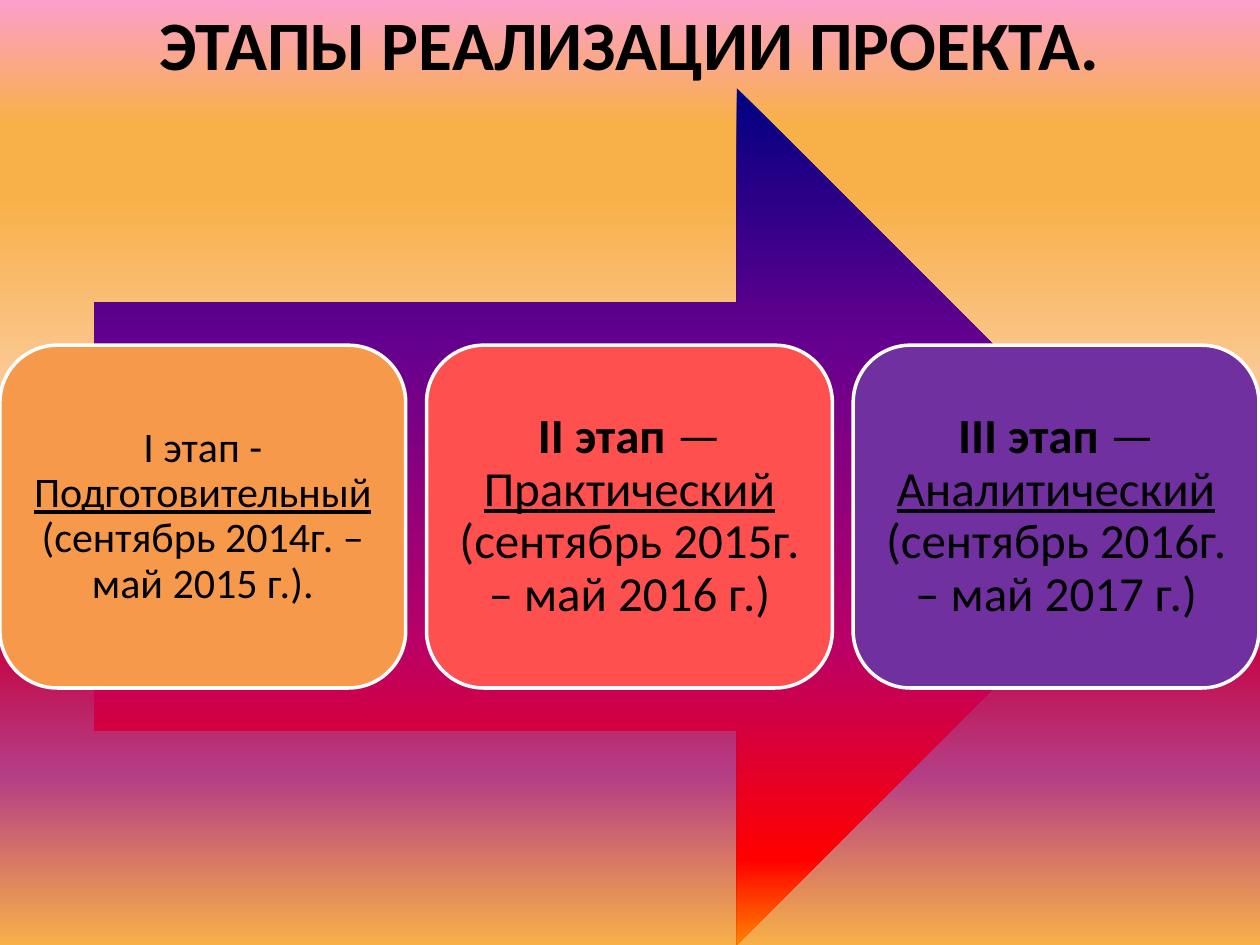
from lxml import etree
from pptx import Presentation
from pptx import util as u
from pptx.dml.color import RGBColor
from pptx.enum import shapes, text
from pptx.oxml.ns import qn

BLACK = RGBColor(0x00, 0x00, 0x00)
WHITE = RGBColor(0xFF, 0xFF, 0xFF)
ORANGE = RGBColor(0xF7, 0x99, 0x4B)
CORAL = RGBColor(0xFF, 0x50, 0x50)
PURPLE = RGBColor(0x70, 0x30, 0xA0)

SUNSET = [
    (0, RGBColor(0xFC, 0x9F, 0xCB)), (13, RGBColor(0xF8, 0xB0, 0x49)),
    (21, RGBColor(0xF8, 0xB0, 0x49)), (63, RGBColor(0xFE, 0xE7, 0xF2)),
    (67, RGBColor(0xF9, 0x52, 0xA0)), (69, RGBColor(0xC5, 0x08, 0x49)),
    (82, RGBColor(0xB4, 0x3E, 0x85)), (100, RGBColor(0xF8, 0xB0, 0x49)),
]
FLAME = [
    (0, RGBColor(0x00, 0x00, 0x82)), (30, RGBColor(0x66, 0x00, 0x8F)),
    (65, RGBColor(0xBA, 0x00, 0x66)), (90, RGBColor(0xFF, 0x00, 0x00)),
    (100, RGBColor(0xFF, 0x82, 0x00)),
]


def fill_downward(fill, element, stops):
    """Give the fill found in element a top-to-bottom gradient."""
    fill.gradient()
    fill.gradient_angle = 270
    stop_list = element.xpath(".//a:gsLst")[0]
    for old in list(stop_list):
        stop_list.remove(old)
    for percent, color in stops:
        stop = etree.SubElement(stop_list, qn("a:gs"), pos=str(percent * 1000))
        etree.SubElement(stop, qn("a:srgbClr"), val=str(color))


def write(shape, runs, size, inset, line_spacing=1.0):
    """Put (text, format) runs into one centred paragraph."""
    frame = shape.text_frame
    frame.word_wrap = True
    frame.vertical_anchor = text.MSO_ANCHOR.MIDDLE
    frame.margin_left = frame.margin_right = inset
    frame.margin_top = frame.margin_bottom = inset
    line = frame.paragraphs[0]
    line.alignment = text.PP_ALIGN.CENTER
    line.line_spacing = line_spacing
    for words, style in runs:
        run = line.add_run()
        run.text = words
        run.font.name = "Calibri"
        run.font.size = u.Pt(size)
        run.font.color.rgb = BLACK
        run.font.bold = style == "bold"
        run.font.underline = style == "underline"


deck = Presentation()
deck.slide_width, deck.slide_height = u.Cm(25.4), u.Cm(19.05)
slide = deck.slides.add_slide(deck.slide_layouts[6])

# Background
fill_downward(slide.background.fill, slide.element, SUNSET)

# Title
title = slide.shapes.add_textbox(u.Cm(1.27), u.Cm(0.05), u.Cm(22.86), u.Cm(1.63))
write(title, [("ЭТАПЫ РЕАЛИЗАЦИИ ПРОЕКТА.", "bold")], size=39.6, inset=u.Cm(0.13))

# Arrow behind the stages
arrow = slide.shapes.add_shape(
    shapes.MSO_SHAPE.RIGHT_ARROW, u.Cm(1.9), u.Cm(1.78), u.Cm(21.59), u.Cm(17.27))
arrow.shadow.inherit = False
arrow.line.fill.background()
fill_downward(arrow.fill, arrow.element, FLAME)

# Stages: colour, text size, inset, heading, heading style, name, period
stages = [
    (ORANGE, 24, 0.23, "I этап - ", None,
     "Подготовительный", " (сентябрь 2014г. – май 2015 г.)."),
    (CORAL, 28, 0.3, "II этап", "bold",
     "Практический", " (сентябрь 2015г. – май 2016 г.)"),
    (PURPLE, 28, 0.3, "III этап", "bold",
     "Аналитический", " (сентябрь 2016г. – май 2017 г.)"),
]
STAGE_STEP = 8.6
for index, (color, size, inset, heading, style, name, period) in enumerate(stages):
    stage = slide.shapes.add_shape(
        shapes.MSO_SHAPE.ROUNDED_RECTANGLE,
        u.Cm(index * STAGE_STEP), u.Cm(6.96), u.Cm(8.18), u.Cm(6.91))
    stage.shadow.inherit = False
    stage.fill.solid()
    stage.fill.fore_color.rgb = color
    stage.line.color.rgb = WHITE
    stage.line.width = u.Pt(2)
    runs = [(heading, style), (name, "underline"), (period, None)]
    if style == "bold":
        runs.insert(1, (" — ", None))
    write(stage, runs, size=size, inset=u.Cm(inset), line_spacing=0.9)

deck.save("out.pptx")
